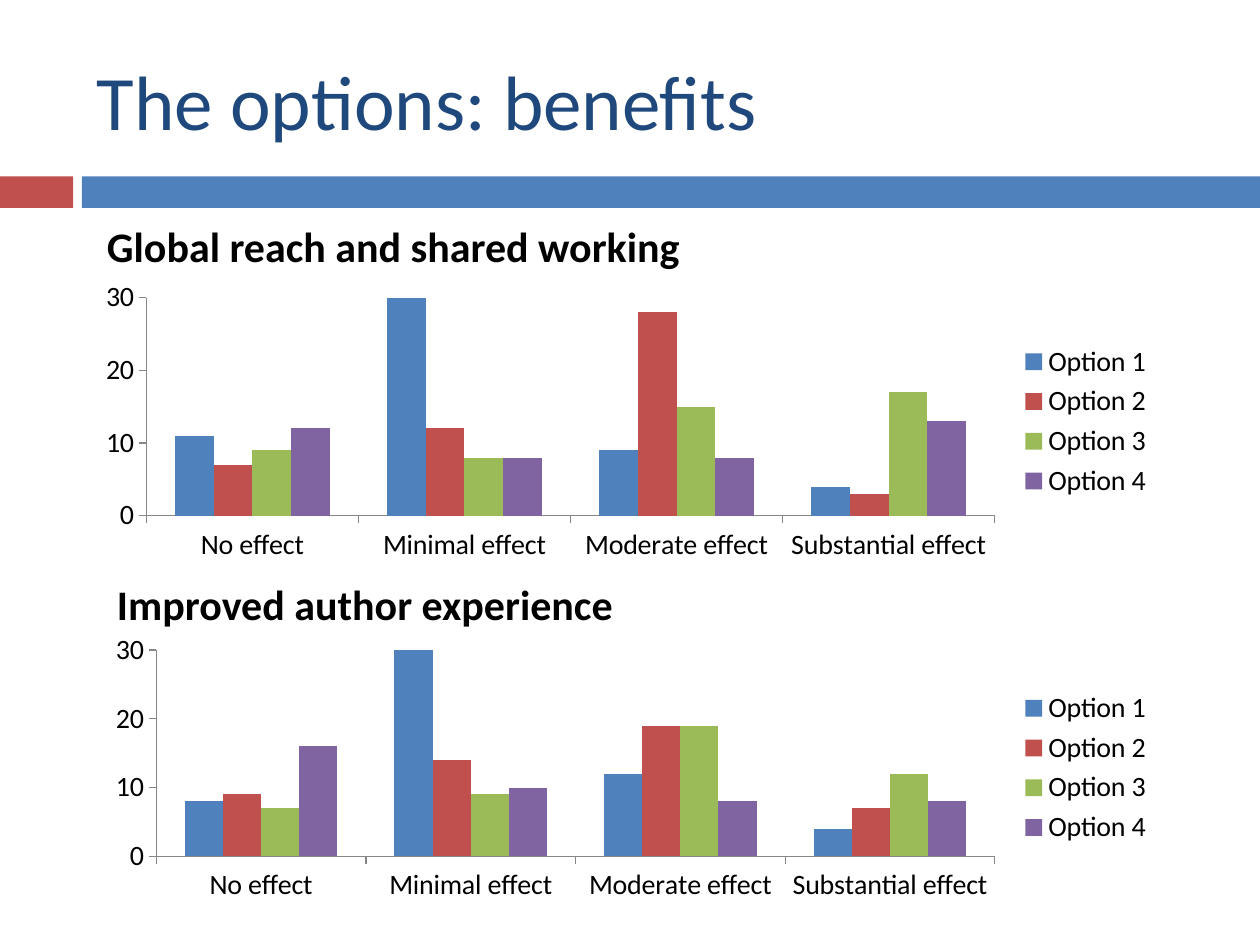
from dataclasses import dataclass

from pptx import Presentation
from pptx import util as u
from pptx.chart.data import CategoryChartData
from pptx.dml.color import RGBColor
from pptx.enum import chart as ch
from pptx.enum import shapes, text
from pptx.slide import Slide

FONT = "Calibri"
COLORS = {
    "blue": "4F81BD",
    "red": "C0504D",
    "green": "9BBB59",
    "purple": "8064A2",
    "title": "1F497D",
    "text": "000000",
    "axis": "868686",
}
CATEGORIES = ["No effect", "Minimal effect", "Moderate effect", "Substantial effect"]
SERIES_COLORS = ["blue", "red", "green", "purple"]


@dataclass
class Box:
    left: float
    top: float
    width: float
    height: float

    def lengths(self) -> list[u.Length]:
        return [u.Inches(v) for v in (self.left, self.top, self.width, self.height)]


@dataclass
class Label:
    box: Box
    words: str
    size: int
    color: str
    bold: bool = False
    anchor: text.MSO_ANCHOR = text.MSO_ANCHOR.TOP


@dataclass
class Benefit:
    heading: Label
    box: Box
    options: list[list[int]]


def rgb(name: str) -> RGBColor:
    return RGBColor.from_string(COLORS[name])


def add_band(s: Slide, box: Box, color: str) -> None:
    sp = s.shapes.add_shape(shapes.MSO_SHAPE.RECTANGLE, *box.lengths())
    sp.shadow.inherit = False
    sp.fill.solid()
    sp.fill.fore_color.rgb = rgb(color)
    sp.line.fill.background()


def add_label(s: Slide, label: Label) -> None:
    tf = s.shapes.add_textbox(*label.box.lengths()).text_frame
    tf.word_wrap = True
    tf.vertical_anchor = label.anchor
    tf.text = label.words
    font = tf.paragraphs[0].runs[0].font
    font.name = FONT
    font.size = u.Pt(label.size)
    font.bold = label.bold
    font.color.rgb = rgb(label.color)


def add_benefit(s: Slide, benefit: Benefit) -> None:
    add_label(s, benefit.heading)
    data = CategoryChartData()
    data.categories = CATEGORIES
    for number, values in enumerate(benefit.options, 1):
        data.add_series(f"Option {number}", values)
    chart = s.shapes.add_chart(
        ch.XL_CHART_TYPE.COLUMN_CLUSTERED, *benefit.box.lengths(), data
    ).chart
    chart.has_title = False
    chart.font.name = FONT
    chart.font.size = u.Pt(16)
    chart.font.color.rgb = rgb("text")
    chart.has_legend = True
    chart.legend.position = ch.XL_LEGEND_POSITION.RIGHT
    chart.legend.include_in_layout = False
    chart.legend.font.size = u.Pt(16)

    plot = chart.plots[0]
    plot.gap_width = 150
    plot.overlap = 0
    plot.vary_by_categories = False
    for series, color in zip(plot.series, SERIES_COLORS):
        series.invert_if_negative = False
        series.format.fill.solid()
        series.format.fill.fore_color.rgb = rgb(color)

    for axis in (chart.category_axis, chart.value_axis):
        axis.has_major_gridlines = False
        axis.major_tick_mark = ch.XL_TICK_MARK.OUTSIDE
        axis.minor_tick_mark = ch.XL_TICK_MARK.NONE
        axis.tick_labels.font.size = u.Pt(16)
        axis.format.line.color.rgb = rgb("axis")
        axis.format.line.width = u.Pt(0.75)
    chart.value_axis.minimum_scale = 0
    chart.value_axis.maximum_scale = 30
    chart.value_axis.major_unit = 10


def main() -> None:
    prs = Presentation()
    prs.slide_width = u.Inches(10)
    prs.slide_height = u.Inches(7.5)
    s = prs.slides.add_slide(prs.slide_layouts[6])

    add_band(s, Box(0, 1.4, 0.58, 0.25), "red")
    add_band(s, Box(0.65, 1.4, 9.35, 0.25), "blue")
    add_label(
        s,
        Label(
            Box(0.67, 0.25, 8.92, 1.08),
            "The options: benefits",
            44,
            "title",
            anchor=text.MSO_ANCHOR.MIDDLE,
        ),
    )

    benefits = [
        Benefit(
            Label(Box(0.75, 1.7, 6.61, 0.5), "Global reach and shared working", 24, "text", True),
            Box(0.67, 2.18, 8.58, 2.33),
            [[11, 30, 9, 4], [7, 12, 28, 3], [9, 8, 15, 17], [12, 8, 8, 13]],
        ),
        Benefit(
            Label(Box(0.83, 4.54, 6.61, 0.5), "Improved author experience", 24, "text", True),
            Box(0.75, 4.98, 8.5, 2.23),
            [[8, 31, 12, 4], [9, 14, 19, 7], [7, 9, 19, 12], [16, 10, 8, 8]],
        ),
    ]
    for benefit in benefits:
        add_benefit(s, benefit)
    prs.save("out.pptx")


if __name__ == "__main__":
    main()
